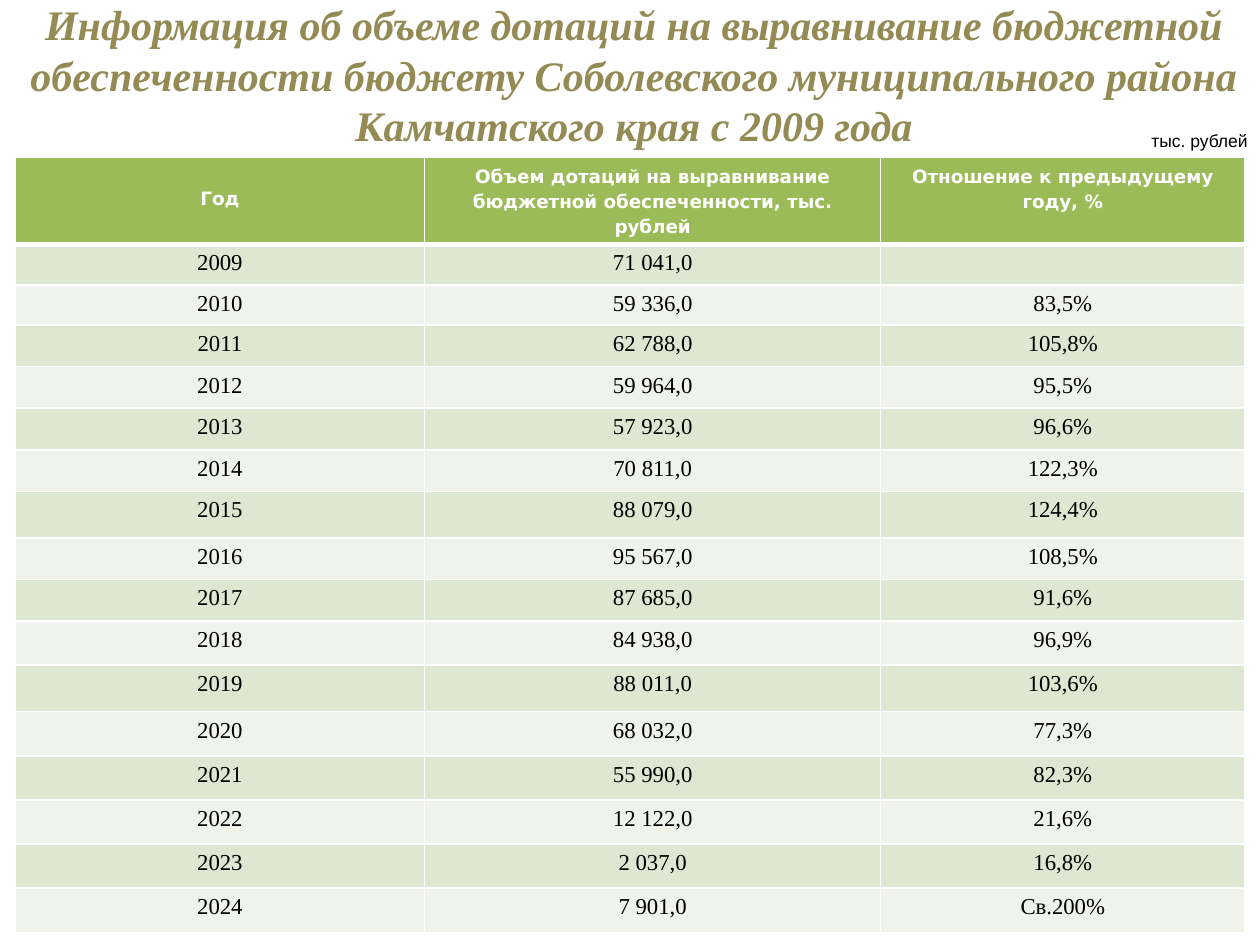
from lxml.etree import SubElement
from pptx import Presentation
from pptx.dml.color import RGBColor
from pptx.enum.text import MSO_ANCHOR, MSO_AUTO_SIZE, PP_ALIGN
from pptx.oxml.ns import qn
from pptx.util import Inches, Pt

COLORS = {
    "title": "948A54",
    "header": "9BBB59",
    "odd": "DEE7D1",
    "even": "EFF3EA",
    "white": "FFFFFF",
    "black": "000000",
}


def add_span(para, text, font, size, color, bold=False, italic=False):
    span = para.add_run()
    span.text = text
    span.font.name = font
    span.font.size = Pt(size)
    span.font.color.rgb = RGBColor.from_string(COLORS[color])
    span.font.bold = bold
    span.font.italic = italic


def add_border(cell, side, width):
    line = SubElement(cell._tc.get_or_add_tcPr(), qn("a:" + side), w=str(Pt(width)))
    fill = SubElement(line, qn("a:solidFill"))
    SubElement(fill, qn("a:srgbClr"), val=COLORS["white"])


deck = Presentation()
deck.slide_width = Inches(10)
deck.slide_height = Inches(7.5)
page = deck.slides.add_slide(deck.slide_layouts[5])

title = page.shapes.title
title.left, title.top = Inches(-0.91), Inches(0.28)
title.width, title.height = Inches(11.1), Inches(0.62)
title.text_frame.word_wrap = True
title.text_frame.auto_size = MSO_AUTO_SIZE.NONE
title.text_frame.vertical_anchor = MSO_ANCHOR.MIDDLE
para = title.text_frame.paragraphs[0]
para.alignment = PP_ALIGN.CENTER
para._p.get_or_add_pPr().set("marL", str(Inches(0.78)))
add_span(
    para,
    "Информация об объеме дотаций на выравнивание бюджетной обеспеченности "
    "бюджету Соболевского муниципального района Камчатского края с 2009 года",
    "Times New Roman", 24, "title", bold=True, italic=True,
)

rows = [
    ("Год", "Объем дотаций на выравнивание бюджетной обеспеченности, тыс. рублей",
     "Отношение к предыдущему году, %"),
    ("2009", "71 041,0", ""),
    ("2010", "59 336,0", "83,5%"),
    ("2011", "62 788,0", "105,8%"),
    ("2012", "59 964,0", "95,5%"),
    ("2013", "57 923,0", "96,6%"),
    ("2014", "70 811,0", "122,3%"),
    ("2015", "88 079,0", "124,4%"),
    ("2016", "95 567,0", "108,5%"),
    ("2017", "87 685,0", "91,6%"),
    ("2018", "84 938,0", "96,9%"),
    ("2019", "88 011,0", "103,6%"),
    ("2020", "68 032,0", "77,3%"),
    ("2021", "55 990,0", "82,3%"),
    ("2022", "12 122,0", "21,6%"),
    ("2023", "2 037,0", "16,8%"),
    ("2024", "7 901,0", "Св.200%"),
]
column_widths = [3.25, 3.62, 2.89]
row_heights = [0.69, 0.32, 0.32] + [0.33] * 4 + [0.37, 0.33, 0.33, 0.35, 0.37] + [0.35] * 5

table = page.shapes.add_table(
    len(rows), len(column_widths), Inches(0.12), Inches(1.25),
    Inches(sum(column_widths)), Inches(sum(row_heights)),
).table
for column, width in zip(table.columns, column_widths):
    column.width = Inches(width)
for row, height in zip(table.rows, row_heights):
    row.height = Inches(height)

for row_index, values in enumerate(rows):
    is_header = row_index == 0
    fill_name = "header" if is_header else "odd" if row_index % 2 else "even"
    for column_index, value in enumerate(values):
        cell = table.cell(row_index, column_index)
        add_border(cell, "lnL", 1)
        add_border(cell, "lnR", 1)
        add_border(cell, "lnT", 3 if row_index == 1 else 1)
        add_border(cell, "lnB", 3 if is_header else 1)
        cell.fill.solid()
        cell.fill.fore_color.rgb = RGBColor.from_string(COLORS[fill_name])
        para = cell.text_frame.paragraphs[0]
        para.alignment = PP_ALIGN.CENTER
        if is_header:
            para.line_spacing = 1.15
            add_span(para, value, "DejaVu Sans", 10.5, "white", bold=True)
        elif value:
            add_span(para, value, "Times New Roman", 13, "black")
        else:
            para.font.size = Pt(13)
table.cell(0, 0).margin_top = Inches(0.22)

unit_label = page.shapes.add_textbox(Inches(9.02), Inches(0.98), Inches(0.98), Inches(0.27))
unit_label.text_frame.word_wrap = False
unit_label.text_frame.auto_size = MSO_AUTO_SIZE.SHAPE_TO_FIT_TEXT
para = unit_label.text_frame.paragraphs[0]
para.alignment = PP_ALIGN.RIGHT
add_span(para, "тыс. рублей", "Arial", 10, "black")

deck.save("out.pptx")
